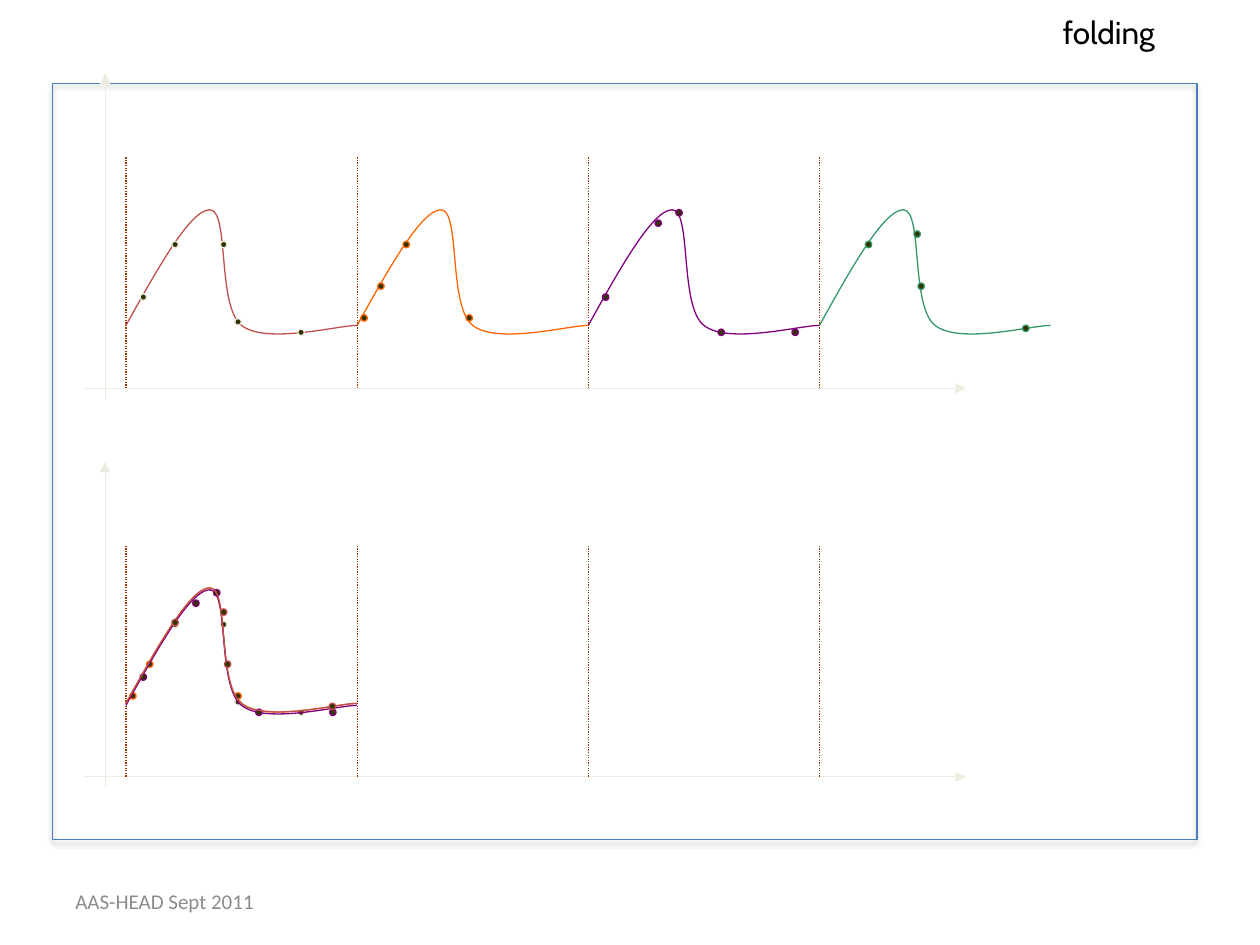
from lxml.etree import SubElement as Sub
from pptx import Presentation
from pptx.dml.color import RGBColor
from pptx.enum.dml import MSO_LINE as Dash
from pptx.enum.shapes import MSO_CONNECTOR as Conn, MSO_SHAPE as Kind
from pptx.enum.text import MSO_ANCHOR as Anchor, MSO_AUTO_SIZE as Fit, PP_ALIGN as Align
from pptx.oxml.ns import qn
from pptx.util import Cm, Pt

# All lengths are in centimetres; heights are measured upwards from a base line.
LEFT, PERIOD, COUNT = 2.54, 4.66, 4
TOP_BASE, LOW_BASE = 7.83, 15.66
FOLD_BASE, OFFSET = 15.45, 0.04
DOT = 0.13
PALE, RED, ORANGE, PURPLE, GREEN = "EEECE1", "C0504D", "FF6600", "800080", "339966"

# Start point, then three points for each Bezier segment
CURVE = [(0, 1.27),
         (0.65, 2.44), (1.3, 3.6), (1.69, 3.6),
         (2.09, 3.6), (1.83, 1.66), (2.33, 1.27),
         (2.82, 0.88), (4.27, 1.27), (PERIOD, 1.27)]

# Measured points of each cycle, relative to the start of that cycle
CYCLES = [
    [(0.35, 1.84), (0.99, 2.9), (1.97, 2.9), (2.26, 1.34), (3.53, 1.13)],
    [(0.14, 1.42), (0.48, 2.06), (0.99, 2.9), (2.26, 1.42)],
    [(0.35, 1.84), (1.41, 3.33), (1.83, 3.54), (2.68, 1.13), (4.17, 1.13)],
    [(0.99, 2.9), (4.16, 1.21), (2.05, 2.06), (1.97, 3.11)],
]
# Curve colour and dot colour of each cycle
SPREAD = [(RED, PALE), (ORANGE, ORANGE), (PURPLE, PURPLE), (GREEN, GREEN)]
# Colour, base line and points left out where another cycle has the same one
FOLDED = [(PALE, FOLD_BASE + OFFSET, [(0.35, 1.84)]),
          (ORANGE, FOLD_BASE, [(0.99, 2.9)]),
          (PURPLE, FOLD_BASE + OFFSET, []),
          (RED, FOLD_BASE, [])]


def tint(code):
    return RGBColor.from_string(code)


def stroke(shape, color):
    shape.line.color.rgb = tint(color)
    shape.line.width = Pt(0.75)


def add_line(shapes, x1, y1, x2, y2, color, dash=None, arrow=None):
    line = shapes.add_connector(Conn.STRAIGHT, Cm(x1), Cm(y1), Cm(x2), Cm(y2))
    stroke(line, color)
    if dash:
        line.line.dash_style = dash
    if arrow:
        Sub(line.line._get_or_add_ln(), qn(arrow), type="triangle")
    Sub(line._element.spPr, qn("a:effectLst"))


def add_axes(shapes, base):
    add_line(shapes, 2.12, base - 6.35, 2.12, base + 0.21, PALE, arrow="a:headEnd")
    add_line(shapes, 1.69, base, 19.47, base, PALE, arrow="a:tailEnd")


def add_marks(shapes, base):
    """Draw the dotted line at the start of each period."""
    for i in range(COUNT):
        x = LEFT + i * PERIOD
        add_line(shapes, x, base - PERIOD, x, base, "993300", dash=Dash.ROUND_DOT)


def add_curve(shapes, left, base, color):
    pts = [(Cm(left + x), Cm(base - y)) for x, y in CURVE]
    pen = shapes.build_freeform(*pts[0])
    pen.add_line_segments(pts[1:], close=False)
    curve = pen.convert_to_shape()
    # Join every three straight steps into one cubic segment
    steps = curve._element.xpath(".//a:lnTo")
    for i in range(0, len(steps), 3):
        bend = Sub(steps[i].getparent(), qn("a:cubicBezTo"))
        for step in steps[i:i + 3]:
            bend.append(step[0])
            step.getparent().remove(step)
    curve.fill.background()
    stroke(curve, color)
    curve.shadow.inherit = False


def add_dot(shapes, x, y, color):
    dot = shapes.add_shape(Kind.OVAL, Cm(x - DOT / 2), Cm(y - DOT / 2), Cm(DOT), Cm(DOT))
    dot.fill.solid()
    dot.fill.fore_color.rgb = tint("333300")
    stroke(dot, color)
    dot.shadow.inherit = False


def add_cycle(shapes, left, base, dots, color, rim):
    group = shapes.add_group_shape().shapes
    add_curve(group, left, base, color)
    for x, y in dots:
        add_dot(group, left + x, base - y, rim)


def add_frame(shapes):
    frame = shapes.add_shape(Kind.RECTANGLE, Cm(1.06), Cm(1.69), Cm(23.07), Cm(15.24))
    frame.fill.background()
    stroke(frame, "4B7EBC")
    frame.shadow.inherit = False
    glow = Sub(frame._element.spPr.find(qn("a:effectLst")), qn("a:outerShdw"),
               blurRad=str(Pt(3.1)), dist=str(Pt(1.8)), dir="5400000", rotWithShape="0")
    shade = Sub(glow, qn("a:srgbClr"), val="000000")
    Sub(shade, qn("a:alpha"), val="35000")


def set_text(shape, box, text, font, size, color, wrap):
    shape.left, shape.top, shape.width, shape.height = map(Cm, box)
    frame = shape.text_frame
    frame.word_wrap = wrap
    frame.auto_size = Fit.NONE if wrap else Fit.SHAPE_TO_FIT_TEXT
    frame.vertical_anchor = Anchor.MIDDLE
    para = frame.paragraphs[0]
    para.alignment = Align.LEFT
    run = para.add_run()
    run.text = text
    run.font.name, run.font.size = font, Pt(size)
    run.font.color.rgb = tint(color)


def main():
    deck = Presentation()
    deck.slide_width, deck.slide_height = Cm(25.4), Cm(19.05)
    shapes = deck.slides.add_slide(deck.slide_layouts[5]).shapes
    set_text(shapes.title, (21.17, 0, 2.79, 1.27), "folding", "Cabin", 18, "000000", False)
    add_frame(shapes)

    add_axes(shapes, TOP_BASE)
    for i, (dots, (color, rim)) in enumerate(zip(CYCLES, SPREAD)):
        add_cycle(shapes, LEFT + i * PERIOD, TOP_BASE, dots, color, rim)
    add_marks(shapes, TOP_BASE)

    grid = shapes.add_group_shape().shapes
    add_axes(grid, LOW_BASE)
    add_marks(grid, LOW_BASE)
    for dots, (color, base, skip) in zip(CYCLES, FOLDED):
        kept = [dot for dot in dots if dot not in skip]
        add_cycle(shapes, LEFT, base, kept, color, color)

    foot = shapes.add_textbox(0, 0, 0, 0)
    set_text(foot, (1.27, 17.66, 5.93, 1.01), "AAS-HEAD Sept 2011", "Calibri", 12, "8C8C8C", True)
    deck.save("out.pptx")


if __name__ == "__main__":
    main()
